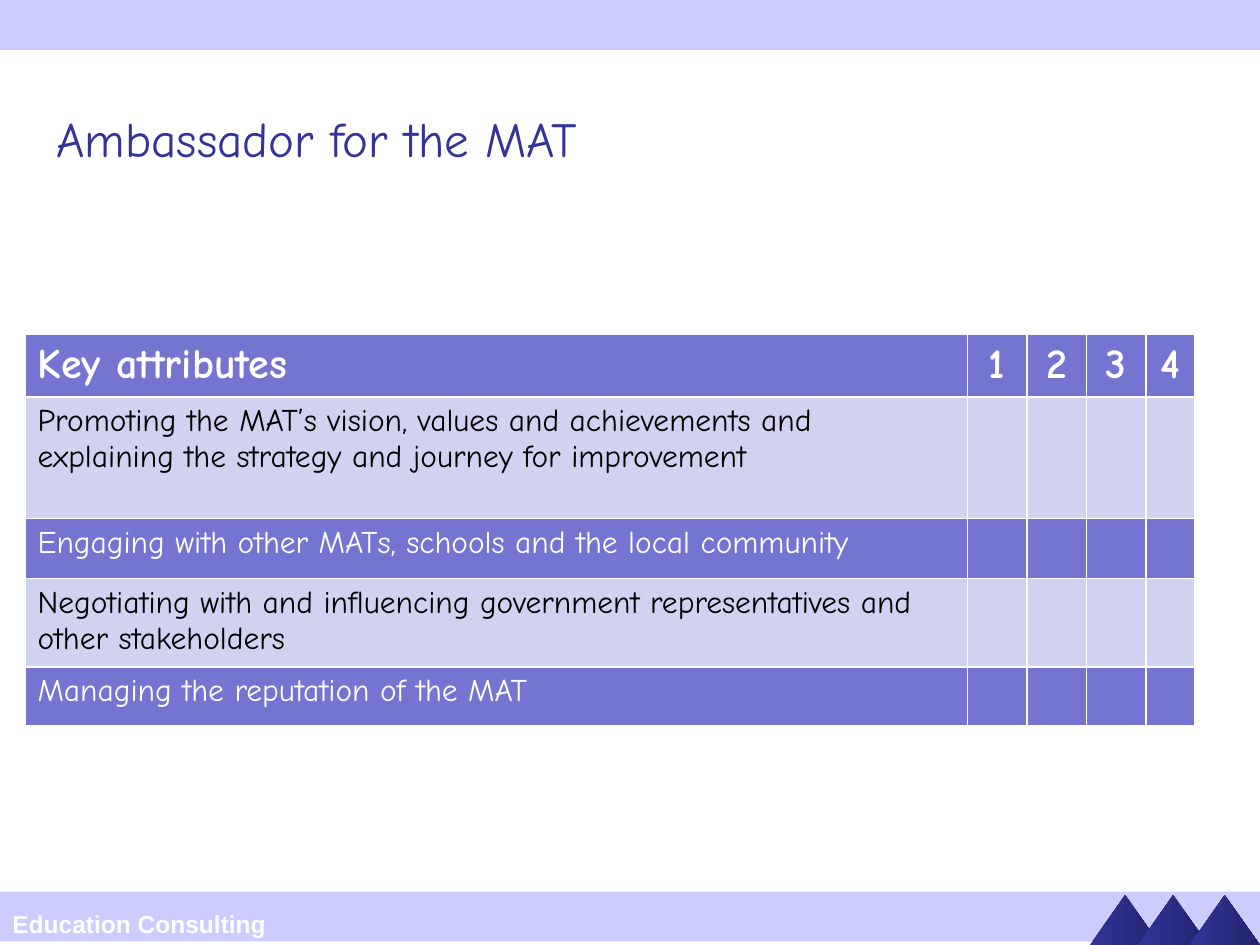
from pptx import Presentation
from pptx.util import Pt
from pptx.dml.color import RGBColor
from pptx.enum.shapes import MSO_SHAPE as Shape
from pptx.enum.text import PP_ALIGN as Align, MSO_ANCHOR as Anchor
from pptx.oxml import parse_xml
from pptx.oxml.ns import nsdecls

NAVY = RGBColor(0x33, 0x33, 0x99)
DARK = RGBColor(0x24, 0x24, 0x6D)
LILAC = RGBColor(0xCC, 0xCC, 0xFF)
VIOLET = RGBColor(0x75, 0x75, 0xD1)
PALE = RGBColor(0xD1, 0xD1, 0xF0)
WHITE = RGBColor(0xFF, 0xFF, 0xFF)
BLACK = RGBColor(0, 0, 0)


def add_run(para, text, size, color, font="Comic Neue", bold=False):
    run = para.add_run()
    run.text = text
    run.font.name = font
    run.font.size = Pt(size)
    run.font.bold = bold
    run.font.color.rgb = color


def add_edge(cell, side, width):
    cell._tc.get_or_add_tcPr().append(parse_xml(
        f'<a:ln{side} {nsdecls("a")} w="{Pt(width)}"><a:solidFill>'
        f'<a:srgbClr val="{WHITE}"/></a:solidFill></a:ln{side}>'))


deck = Presentation()
deck.slide_width, deck.slide_height = Pt(720), Pt(540)
slide = deck.slides.add_slide(deck.slide_layouts[6])
shapes = slide.shapes

for top in (509.5, 0):
    bar = shapes.add_shape(Shape.RECTANGLE, 0, Pt(top), Pt(720), Pt(28.5))
    bar.shadow.inherit = False
    bar.fill.solid()
    bar.fill.fore_color.rgb = LILAC
    bar.line.fill.background()

for left in (622.8, 650.2, 679.7):
    peak = shapes.add_shape(Shape.ISOSCELES_TRIANGLE, Pt(left), Pt(511.5), Pt(40.3), Pt(28.5))
    peak.shadow.inherit = False
    peak.fill.gradient()
    peak.fill.gradient_angle = 0
    for stop, color in zip(peak.fill.gradient_stops, (NAVY, DARK)):
        stop.color.rgb = color
    peak.line.fill.background()

brand = shapes.add_textbox(0, Pt(516.2), Pt(204.5), Pt(23.8)).text_frame
brand.word_wrap = True
add_run(brand.paragraphs[0], "Education Consulting", 14, WHITE, "Arial", True)

title = shapes.add_textbox(Pt(25.2), Pt(43.2), Pt(694.8), Pt(71.3)).text_frame
title.word_wrap = True
title.vertical_anchor = Anchor.MIDDLE
add_run(title.paragraphs[0], "Ambassador for the MAT", 28, NAVY)

rows = [
    ["Key attributes", "1", "2", "3", "4"],
    ["Promoting the MAT’s vision, values and achievements and explaining "
     "the strategy and journey for improvement"],
    ["Engaging with other MATs, schools and the local community"],
    ["Negotiating with and influencing government representatives and other stakeholders"],
    ["Managing the reputation of the MAT"],
]
wide = [538.5, 34, 34, 34, 28]
high = [34.4, 69.5, 34.3, 48.5, 33.8]
table = shapes.add_table(5, 5, Pt(14.3), Pt(190.8), Pt(sum(wide)), Pt(sum(high))).table
for col, width in zip(table.columns, wide):
    col.width = Pt(width)
for r, (row, height) in enumerate(zip(table.rows, high)):
    row.height = Pt(height)
    head = r == 0
    for c, cell in enumerate(row.cells):
        for side in "LRTB":
            add_edge(cell, side, 1.5 if head and side == "B" or r == 1 and side == "T" else 1)
        cell.fill.solid()
        cell.fill.fore_color.rgb = PALE if r % 2 else VIOLET
        para = cell.text_frame.paragraphs[0]
        if c:
            para.alignment = Align.CENTER
        if c < len(rows[r]):
            add_run(para, rows[r][c], 24 if head else 18, BLACK if r % 2 else WHITE, bold=head)

deck.save("out.pptx")
